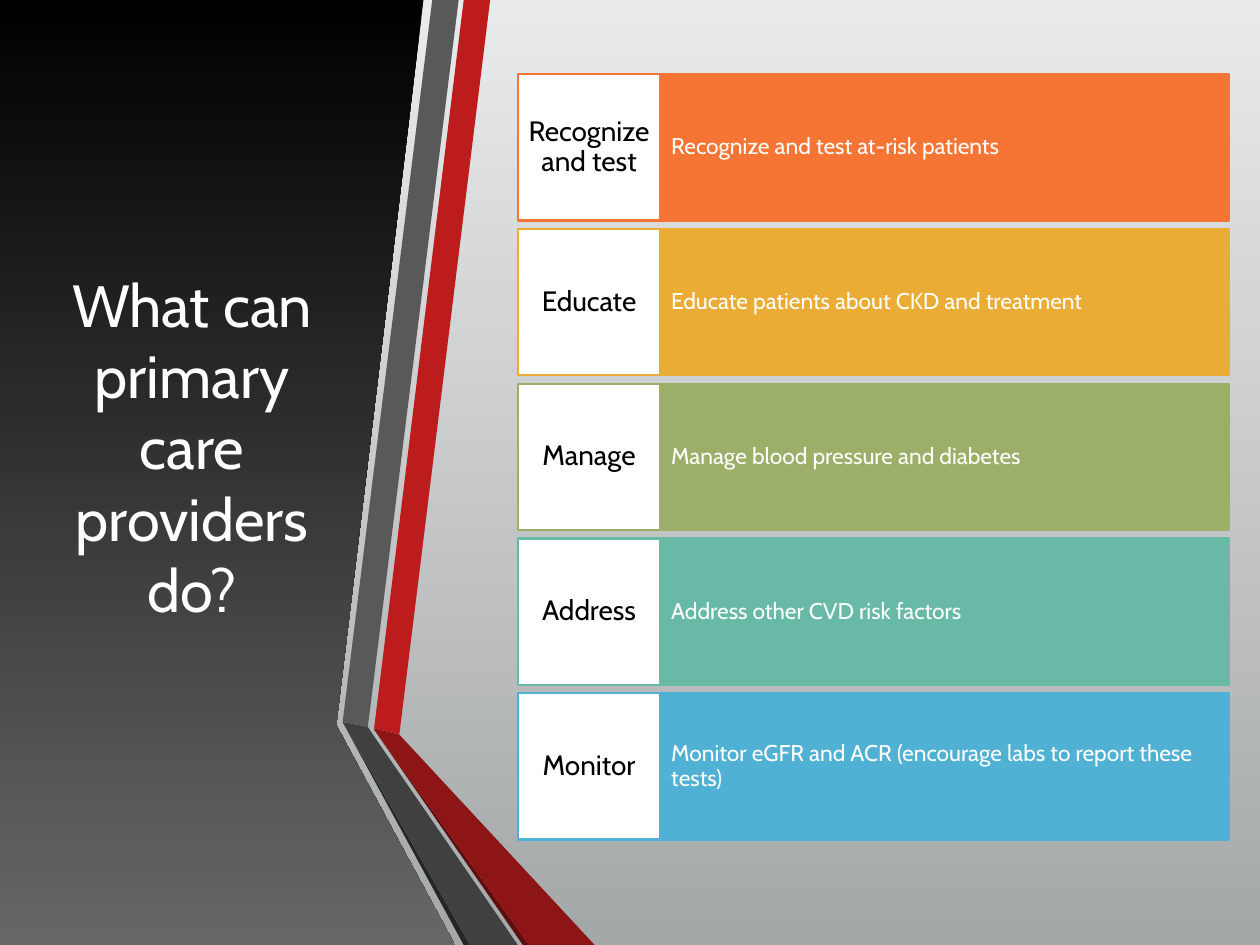
from pptx import Presentation
from pptx.dml.color import RGBColor
from pptx.enum.shapes import MSO_SHAPE as Shape
from pptx.enum.text import MSO_ANCHOR as Anchor, MSO_AUTO_SIZE as AutoSize, PP_ALIGN as Align
from pptx.util import Pt

# Content
TITLE = "What can primary care providers do?"
ACTIONS = [
    ("Recognize and test", "Recognize and test at-risk patients", "orange"),
    ("Educate", "Educate patients about CKD and treatment", "amber"),
    ("Manage", "Manage blood pressure and diabetes", "olive"),
    ("Address", "Address other CVD risk factors", "teal"),
    ("Monitor", "Monitor eGFR and ACR (encourage labs to report these tests)", "blue"),
]

COLORS = {
    "orange": "F67534", "amber": "EAAC35", "olive": "9BAF68",
    "teal": "68B9A6", "blue": "50B1D4",
    "white": "FFFFFF", "black": "000000", "panel_end": "676767",
    "sky": "E9EAEB", "ground": "A5A8A9",
    "red": "BC1C1C", "red_fold": "8D1515", "red_edge": "5E0E0E",
    "gray": "595959", "gray_fold": "404040", "gray_edge": "262626",
}
FONT = "Cabin"

# Slide size and outlines, in points
WIDTH, HEIGHT = 720, 540
PANEL = [(0, 0), (242, 0), (192.2, 414.4), (260, HEIGHT), (0, HEIGHT)]
RIBBONS = [
    ("red", [(213.8, 416.2), (228.2, 419.8), (280.1, 0), (265, 0)]),
    ("gray", [(262.1, 0), (247, 0), (195.8, 412.6), (210.2, 415.4)]),
    ("gray_edge", [(195.8, 412.6), (265, HEIGHT), (268.6, HEIGHT)]),
    ("red_edge", [(213.8, 416.9), (298.8, HEIGHT), (302.4, HEIGHT)]),
    ("red_fold", [(213.8, 416.9), (302.4, HEIGHT), (339.8, HEIGHT),
                  (228.2, 419.8), (213.8, 416.2)]),
    ("gray_fold", [(295.9, HEIGHT), (213.1, 419.8), (210.2, 415.4),
                   (195.8, 412.6), (268.6, HEIGHT)]),
]

# Action rows, in points
ROW_TOP, ROW_HEIGHT, ROW_PITCH = 42.4, 83.6, 88.45
LABEL_LEFT, LABEL_WIDTH, DETAIL_WIDTH = 296, 81.3, 324.9


def rgb(name):
    return RGBColor.from_string(COLORS[name])


def fill_solid(fill, color):
    fill.solid()
    fill.fore_color.rgb = rgb(color)


def fill_downward(fill, top, bottom):
    fill.gradient()
    fill.gradient_angle = 270
    for stop, color in zip(fill.gradient_stops, (top, bottom)):
        stop.color.rgb = rgb(color)


def add_outline(shapes, points):
    corners = [(Pt(x), Pt(y)) for x, y in points]
    builder = shapes.build_freeform(*corners[0])
    builder.add_line_segments(corners[1:], close=True)
    outline = builder.convert_to_shape()
    outline.shadow.inherit = False
    outline.line.fill.background()
    return outline


def write(frame, text, size, color, align):
    frame.text = text
    frame.word_wrap = True
    frame.auto_size = AutoSize.NONE
    frame.vertical_anchor = Anchor.MIDDLE
    paragraph = frame.paragraphs[0]
    paragraph.alignment = align
    paragraph.font.name = FONT
    paragraph.font.size = Pt(size)
    paragraph.font.color.rgb = rgb(color)
    return paragraph


def add_cell(shapes, left, top, width, text, size, fill, line, color, align, insets):
    cell = shapes.add_shape(Shape.RECTANGLE, Pt(left), Pt(top), Pt(width), Pt(ROW_HEIGHT))
    cell.shadow.inherit = False
    fill_solid(cell.fill, fill)
    cell.line.color.rgb = rgb(line)
    cell.line.width = Pt(1.25)
    frame = cell.text_frame
    frame.margin_left = frame.margin_right = Pt(insets[0])
    frame.margin_top = frame.margin_bottom = Pt(insets[1])
    write(frame, text, size, color, align).line_spacing = 0.9


def main():
    deck = Presentation()
    deck.slide_width, deck.slide_height = Pt(WIDTH), Pt(HEIGHT)
    slide = deck.slides.add_slide(deck.slide_layouts[5])
    shapes = slide.shapes

    # Backdrop and dark panel
    fill_downward(slide.background.fill, "sky", "ground")
    backdrop = shapes.add_shape(Shape.RECTANGLE, 0, 0, Pt(WIDTH), Pt(HEIGHT))
    backdrop.shadow.inherit = False
    backdrop.line.fill.background()
    fill_downward(backdrop.fill, "sky", "ground")
    fill_downward(add_outline(shapes, PANEL).fill, "black", "panel_end")

    # Title, raised above the panel
    title = shapes.title
    title.left, title.top, title.width, title.height = Pt(31.7), Pt(54), Pt(156.2), Pt(401.8)
    write(title.text_frame, TITLE, 34, "white", Align.CENTER)
    title.element.getparent().append(title.element)

    # Folded ribbons
    for color, points in RIBBONS:
        fill_solid(add_outline(shapes, points).fill, color)

    # Action rows: detail bar, then its label
    for row, (label, detail, color) in enumerate(ACTIONS):
        top = ROW_TOP + row * ROW_PITCH
        add_cell(shapes, LABEL_LEFT + LABEL_WIDTH, top, DETAIL_WIDTH, detail, 13,
                 color, color, "white", Align.LEFT, (6.3, 21))
        add_cell(shapes, LABEL_LEFT, top, LABEL_WIDTH, label, 16,
                 "white", color, "black", Align.CENTER, (4.3, 8))

    deck.save("out.pptx")


if __name__ == "__main__":
    main()
